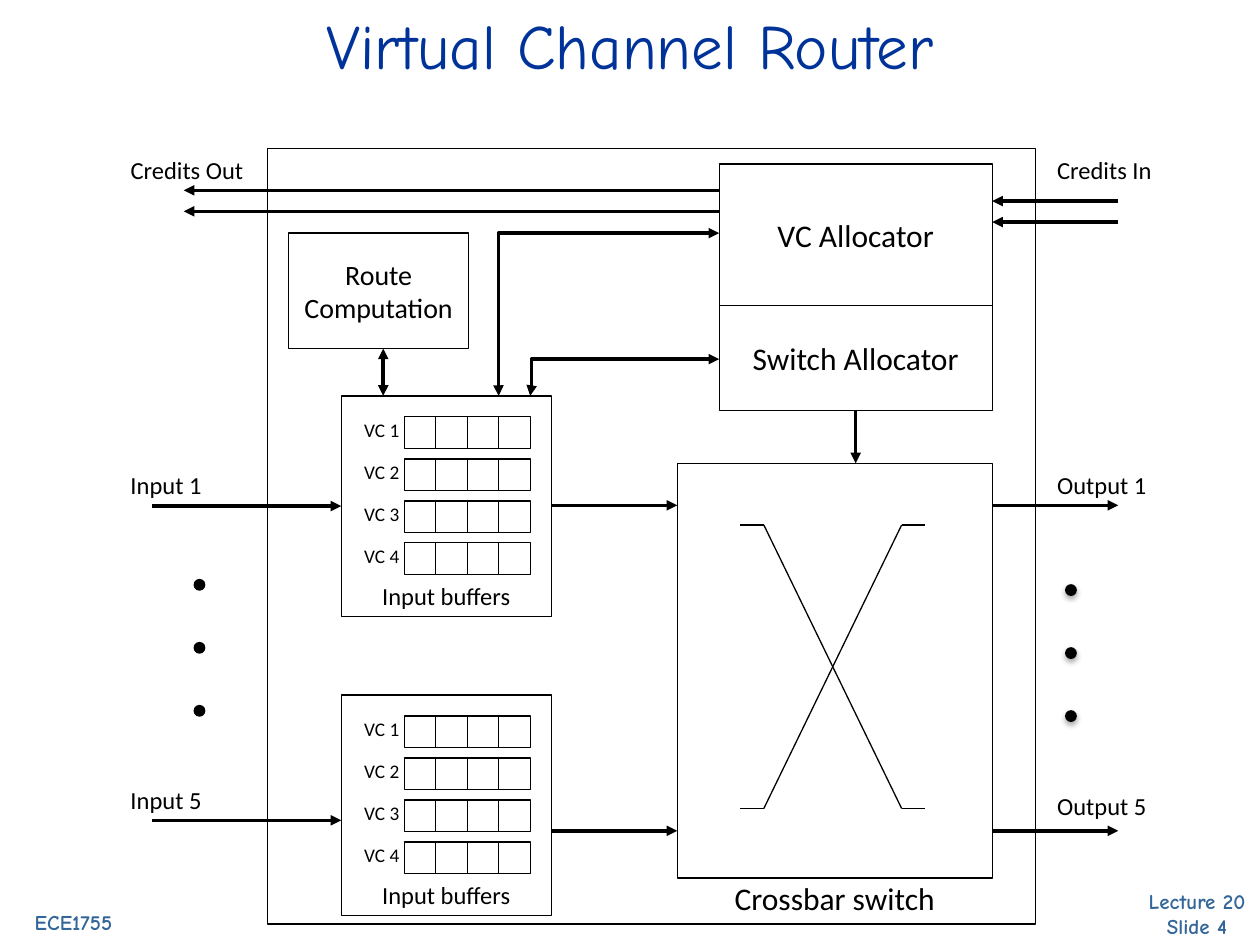
from lxml import etree
from pptx import Presentation
from pptx.dml.color import RGBColor
from pptx.enum.shapes import MSO_CONNECTOR as CON, MSO_SHAPE as SHAPE
from pptx.enum.text import MSO_ANCHOR as ANCHOR, MSO_AUTO_SIZE as FIT, PP_ALIGN as ALIGN
from pptx.oxml.ns import qn
from pptx.util import Inches, Pt

BLACK = RGBColor(0x00, 0x00, 0x00)
NAVY = RGBColor(0x00, 0x33, 0x99)
STEEL = RGBColor(0x33, 0x66, 0x99)
COLS, ROWS = 240, 180


class Diagram:
    """Draws router diagram elements on a grid of COLS by ROWS cells."""

    font, title_font = "Calibri", "Comic Neue"
    thin, thick = Pt(0.75), Pt(2)

    def __init__(self, prs):
        self.prs = prs
        self.s = prs.slides.add_slide(prs.slide_layouts[6])

    def x(self, col):
        return round(self.prs.slide_width * col / COLS)

    def y(self, row):
        return round(self.prs.slide_height * row / ROWS)

    def place(self, col, row, w, h):
        return self.x(col), self.y(row), self.x(w), self.y(h)

    def set_text(self, sp, text, size, font=None, color=BLACK, align=ALIGN.CENTER, bold=False):
        sp.text_frame.text = text
        p = sp.text_frame.paragraphs[0]
        p.alignment = align
        f = p.runs[0].font
        f.name, f.size, f.bold = font or self.font, Pt(size), bold
        f.color.rgb = color

    def shape(self, kind, at):
        sp = self.s.shapes.add_shape(kind, *self.place(*at))
        sp.shadow.inherit = False
        sp.fill.background()
        sp.line.color.rgb = BLACK
        sp.line.width = self.thin
        return sp

    def box(self, at, text="", size=18, anchor=ANCHOR.MIDDLE):
        sp = self.shape(SHAPE.RECTANGLE, at)
        if text:
            self.set_text(sp, text, size)
            sp.text_frame.vertical_anchor = anchor

    def text(self, at, text, size, **style):
        sp = self.s.shapes.add_textbox(*self.place(*at))
        sp.text_frame.word_wrap = True
        self.set_text(sp, text, size, **style)

    def label(self, at, text, size=14):
        sp = self.s.shapes.add_textbox(*self.place(*at))
        sp.text_frame.word_wrap = False
        sp.text_frame.auto_size = FIT.SHAPE_TO_FIT_TEXT
        self.set_text(sp, text, size, align=ALIGN.LEFT)

    def line(self, start, end, width=None, kind=CON.STRAIGHT):
        (c1, r1), (c2, r2) = start, end
        sp = self.s.shapes.add_connector(kind, self.x(c1), self.y(r1), self.x(c2), self.y(r2))
        sp.line.color.rgb = BLACK
        sp.line.width = width or self.thin
        etree.SubElement(sp._element.spPr, qn("a:effectLst"))
        return sp

    def arrow(self, start, end, both=False, kind=CON.STRAIGHT):
        sp = self.line(start, end, self.thick, kind)
        for tag in ("a:headEnd", "a:tailEnd")[0 if both else 1:]:
            etree.SubElement(sp.get_or_add_ln(), qn(tag), type="triangle")
        return sp

    def elbow(self, start, end, bend):
        sp = self.arrow(start, end, True, CON.ELBOW)
        guides = sp._element.spPr.find(qn("a:prstGeom")).get_or_add_avLst()
        etree.SubElement(guides, qn("a:gd"), name="adj1", fmla=f"val {bend}")

    def dots(self, col, row, shadow=False):
        for i in range(3):
            sp = self.shape(SHAPE.OVAL, (col, row + 12 * i, 2, 2))
            sp.fill.solid()
            sp.fill.fore_color.rgb = BLACK
            if shadow:
                effects = sp._element.spPr.find(qn("a:effectLst"))
                outer = etree.SubElement(effects, qn("a:outerShdw"), blurRad=str(Pt(3.1)),
                                         dist=str(Pt(1.8)), dir="5400000", rotWithShape="0")
                clr = etree.SubElement(outer, qn("a:srgbClr"), val=str(BLACK))
                etree.SubElement(clr, qn("a:alpha"), val="35000")

    def buffers(self, col, row, channels=4, slots=4):
        self.box((col, row, 40, 42), "Input buffers", 14, ANCHOR.BOTTOM)
        for i in range(channels):
            top = row + 4 + 8 * i
            for j in range(slots):
                self.box((col + 12 + 6 * j, top, 6, 6))
            self.label((col + 2, top - 1, 12, 7), f"VC {i + 1}", 11)

    def crossbar(self, at):
        left, inner_left, inner_right, right = 141, 145.5, 171.75, 176.25
        top, bottom = 100, 154
        self.line((inner_left, top), (inner_right, bottom))
        self.line((inner_left, bottom), (inner_right, top))
        for row in (top, bottom):
            self.line((left, row), (inner_left, row))
            self.line((inner_right, row), (right, row))
        self.box(at)


def main():
    prs = Presentation()
    prs.slide_width, prs.slide_height = Inches(10), Inches(7.5)
    d = Diagram(prs)

    footer = dict(font=d.title_font, color=STEEL, bold=True)
    d.text((212, 168, 32, 12), "Lecture 20 Slide 4", 12, **footer)
    d.text((-2, 172, 32, 7.2), "ECE1755", 12, **footer)
    d.text((12, 0, 216, 24), "Virtual Channel Router", 36, font=d.title_font, color=NAVY)

    d.box((55, 44.4, 34.25, 22), "Route Computation", 16)
    d.box((137, 31.25, 52, 27), "VC Allocator")
    d.box((137, 58.25, 52, 20), "Switch Allocator")
    for row in (75.4, 132.4):
        d.buffers(65, row)
    d.crossbar((129, 88.25, 60, 79))
    d.box((51, 28.25, 146.25, 147.75))
    d.text((129, 166.25, 60, 9.6), "Crossbar switch", 18)

    for input_row, output_row in ((96.4, 96.25), (156.25, 158.25)):
        d.arrow((29, input_row), (65, input_row))
        d.arrow((105, output_row), (129, output_row))
        d.arrow((189, output_row), (213, output_row))
    d.arrow((163, 78.25), (163, 88.25))
    d.arrow((73, 66.4), (73, 75.4), both=True)
    d.elbow((137, 44.4), (95, 75.4), 100100)
    d.elbow((137, 68.4), (101, 75.4), 99300)
    for row in (38.3, 42.3):
        d.arrow((213, row), (189, row))
    for row in (36.25, 40.25):
        d.arrow((137, row), (35, row))

    for col, row, width, text in (
        (22.5, 148.25, 18.5, "Input 5"),
        (22.5, 88.25, 18.5, "Input 1"),
        (199, 149.5, 22, "Output 5"),
        (199, 88.25, 22, "Output 1"),
        (199, 28.25, 23, "Credits In"),
        (22.5, 28.25, 26.5, "Credits Out"),
    ):
        d.label((col, row, width, 8), text)
    d.dots(37, 110.4)
    d.dots(203, 111.4, shadow=True)
    prs.save("out.pptx")


if __name__ == "__main__":
    main()
